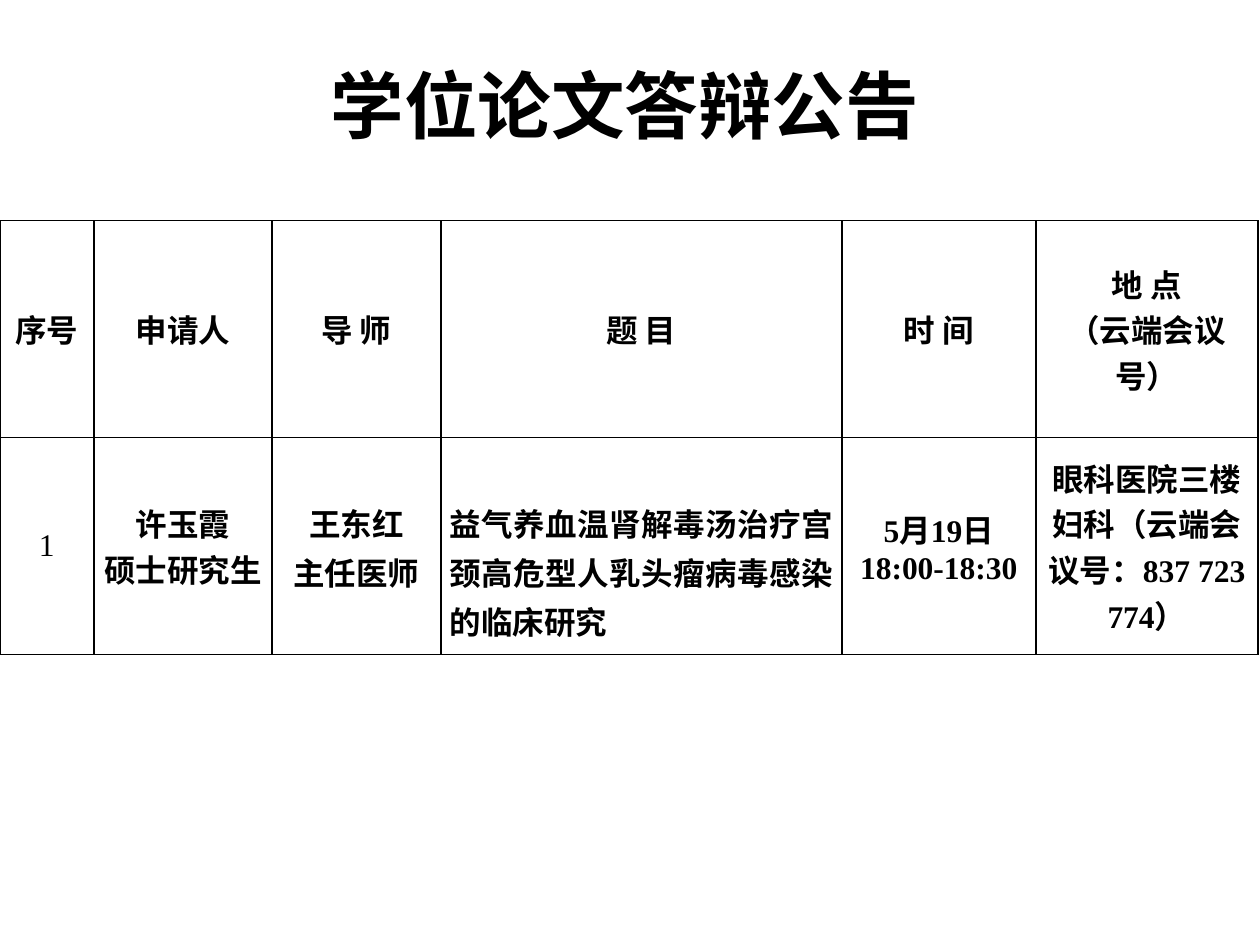
"""Build a thesis defence announcement slide with a schedule table."""
import pptx
import pptx.dml.color
import pptx.enum.text
import pptx.oxml
import pptx.oxml.ns
import pptx.util
from dataclasses import dataclass

Cm = pptx.util.Cm
Pt = pptx.util.Pt
RGBColor = pptx.dml.color.RGBColor
Align = pptx.enum.text.PP_ALIGN
Anchor = pptx.enum.text.MSO_ANCHOR


@dataclass(frozen=True)
class Theme:
    font: str = "Times New Roman"
    ink: str = "000000"
    paper: str = "FFFFFF"
    title_size: int = 42
    table_size: int = 18
    line_pitch: int = 28
    border: int = 1


theme = Theme()


def style_paragraph(paragraph, size, bold=True, align=Align.CENTER):
    paragraph.alignment = align
    paragraph.font.name = theme.font
    paragraph.font.size = Pt(size)
    paragraph.font.bold = bold
    paragraph.font.color.rgb = RGBColor.from_string(theme.ink)


def add_borders(cell):
    properties = cell._tc.get_or_add_tcPr()
    for side in ("lnL", "lnR", "lnT", "lnB"):
        properties.append(pptx.oxml.parse_xml(
            f'<a:{side} {pptx.oxml.ns.nsdecls("a")} w="{Pt(theme.border)}">'
            f'<a:solidFill><a:srgbClr val="{theme.ink}"/></a:solidFill></a:{side}>'))


deck = pptx.Presentation()
deck.slide_width, deck.slide_height = Cm(25.4), Cm(19.05)
page = deck.slides.add_slide(deck.slide_layouts[5])

title = page.shapes.title
title.left, title.top, title.width, title.height = Cm(5.51), Cm(0.94), Cm(14.17), Cm(3.05)
title.text_frame.text = "学位论文答辩公告"
title.text_frame.auto_size = pptx.enum.text.MSO_AUTO_SIZE.NONE
title.text_frame.vertical_anchor = Anchor.MIDDLE
title.text_frame.margin_bottom = Cm(0.85)
style_paragraph(title.text_frame.paragraphs[0], theme.title_size)

column_widths = [1.89, 3.59, 3.41, 8.08, 3.91, 4.48]
row_height = 4.37
rows = [
    ["序号", "申请人", "导 师", "题 目", "时 间", "地 点\n（云端会议号）"],
    ["1", "许玉霞\n硕士研究生", "王东红\n主任医师",
     "益气养血温肾解毒汤治疗宫颈高危型人乳头瘤病毒感染的临床研究",
     "5月19日\n18:00-18:30", "眼科医院三楼妇科（云端会议号：837 723 774）"],
]
number_column, supervisor_column, topic_column = 0, 2, 3

table = page.shapes.add_table(
    len(rows), len(column_widths), Cm(0), Cm(4.45),
    Cm(sum(column_widths)), Cm(row_height * len(rows))).table
table.first_row = False
table.horz_banding = False
for column, width in zip(table.columns, column_widths):
    column.width = Cm(width)

for row_index, texts in enumerate(rows):
    table.rows[row_index].height = Cm(row_height)
    for column_index, text in enumerate(texts):
        cell = table.cell(row_index, column_index)
        add_borders(cell)
        cell.fill.solid()
        cell.fill.fore_color.rgb = RGBColor.from_string(theme.paper)
        cell.vertical_anchor = Anchor.MIDDLE
        cell.text = text
        is_body = row_index > 0
        is_number = is_body and column_index == number_column
        is_topic = is_body and column_index == topic_column
        if is_body and not is_number:
            cell.margin_left = cell.margin_right = Cm(0.18)
            cell.margin_top = Pt(theme.line_pitch) if is_topic else 0
            cell.margin_bottom = 0
        for paragraph in cell.text_frame.paragraphs:
            style_paragraph(paragraph, theme.table_size, not is_number,
                            Align.JUSTIFY if is_topic else Align.CENTER)
            if is_body and column_index in (supervisor_column, topic_column):
                paragraph.line_spacing = Pt(theme.line_pitch)

deck.save("out.pptx")
